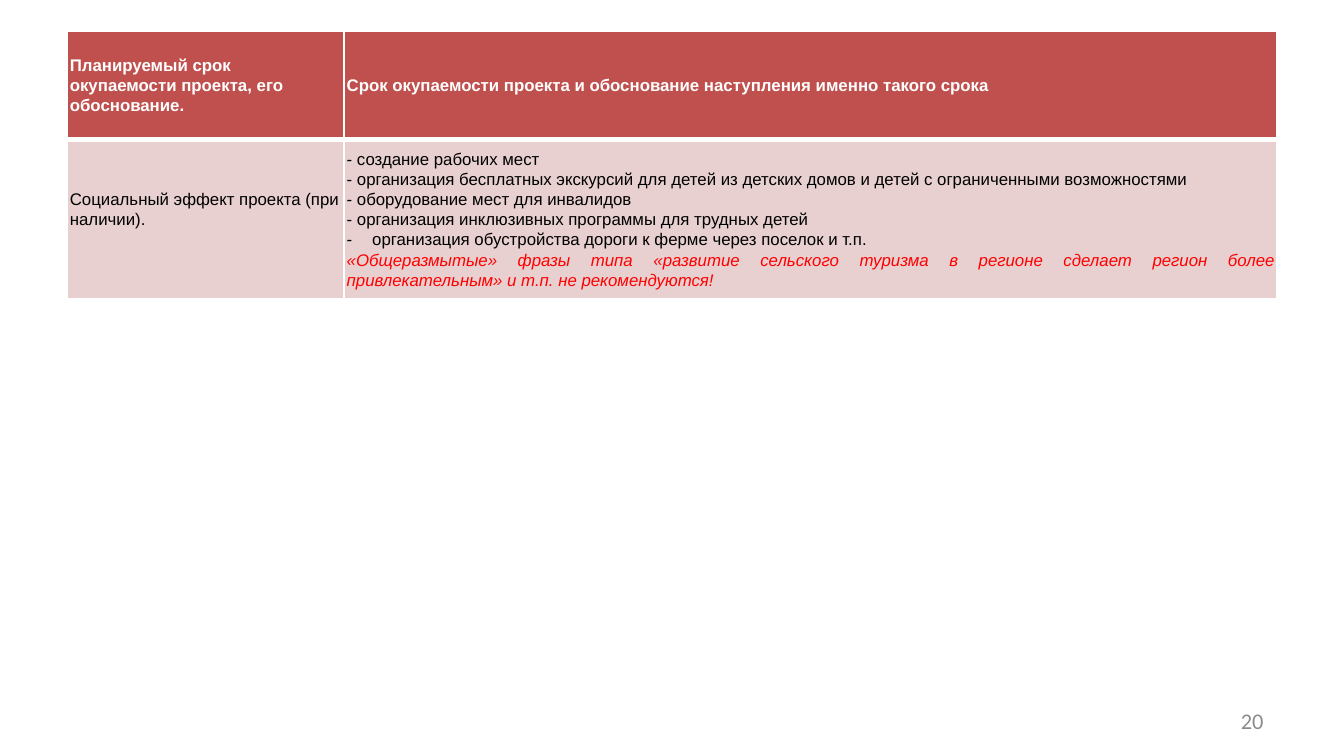
from lxml.etree import SubElement
from pptx import Presentation
from pptx.dml.color import RGBColor
from pptx.enum.text import MSO_ANCHOR as Anchor, PP_ALIGN as Align
from pptx.oxml.ns import qn
from pptx.util import Inches, Pt

COLORS = {
    "header": "C0504D",
    "body": "E8D0D0",
    "white": "FFFFFF",
    "black": "000000",
    "warning": "FF0000",
    "number": "8C8C8C",
}
HEADINGS = [
    "Планируемый срок окупаемости проекта, его обоснование.",
    "Срок окупаемости проекта и обоснование наступления именно такого срока",
]
EFFECT = "Социальный эффект проекта (при наличии)."
EXAMPLES = [
    "- создание рабочих мест",
    "- организация бесплатных экскурсий для детей из детских домов и детей с ограниченными возможностями",
    "- оборудование мест для инвалидов",
    "- организация инклюзивных программы для трудных детей",
    "организация обустройства дороги к ферме через поселок и т.п.",
]
WARNING = (
    "«Общеразмытые» фразы типа «развитие сельского туризма в регионе сделает "
    "регион более привлекательным» и т.п. не рекомендуются!"
)


def rgb(name):
    return RGBColor.from_string(COLORS[name])


def style_font(paragraph, name, size, color, bold=False, italic=False):
    for font in (paragraph.font, *(run.font for run in paragraph.runs)):
        font.name, font.size = name, Pt(size)
        font.bold, font.italic = bold, italic
        font.color.rgb = rgb(color)


def add_bullet(paragraph, char):
    properties = paragraph._p.get_or_add_pPr()
    properties.set("marL", str(Inches(0.19)))
    properties.set("indent", str(-Inches(0.19)))
    for tag, attributes in (
        ("a:buFont", {"typeface": "Arial"}),
        ("a:buChar", {"char": char}),
    ):
        bullet = properties.makeelement(qn(tag), attributes)
        properties.insert_element_before(bullet, "a:tabLst", "a:defRPr", "a:extLst")


def set_borders(cell, top, bottom):
    properties = cell._tc.get_or_add_tcPr()
    widths = {"a:lnL": 1, "a:lnR": 1, "a:lnT": top, "a:lnB": bottom}
    for index, (side, width) in enumerate(widths.items()):
        line = properties.makeelement(qn(side), {"w": str(Pt(width))})
        fill = SubElement(line, qn("a:solidFill"))
        SubElement(fill, qn("a:srgbClr"), val=COLORS["white"])
        properties.insert(index, line)


def fill_cell(cell, lines, fill, color, bold=False, top=1, bottom=1):
    cell.text = "\n".join(lines)
    cell.fill.solid()
    cell.fill.fore_color.rgb = rgb(fill)
    cell.vertical_anchor = Anchor.MIDDLE
    cell.margin_left = cell.margin_right = Inches(0.02)
    cell.margin_top = cell.margin_bottom = Inches(0.03)
    set_borders(cell, top, bottom)
    for paragraph in cell.text_frame.paragraphs:
        paragraph.line_spacing = 1.07
        style_font(paragraph, "Arial", 9, color, bold)


def add_project_table(slide):
    table = slide.shapes.add_table(
        2, 2, Inches(0.5), Inches(0.23), Inches(9), Inches(1.92)
    ).table
    table.horz_banding = False
    for column, width in zip(table.columns, (2.06, 6.94)):
        column.width = Inches(width)
    for row, height in zip(table.rows, (0.81, 1.11)):
        row.height = Inches(height)

    for column, heading in enumerate(HEADINGS):
        fill_cell(table.cell(0, column), [heading], "header", "white", bold=True, bottom=3)

    effect = table.cell(1, 0)
    fill_cell(effect, [EFFECT], "body", "black", top=3)
    effect.margin_bottom = Inches(0.18)

    examples = table.cell(1, 1)
    fill_cell(examples, EXAMPLES + [WARNING], "body", "black", top=3)
    *_, road, warning = examples.text_frame.paragraphs
    add_bullet(road, "-")
    warning.alignment = Align.JUSTIFY
    style_font(warning, "Arial", 9, "warning", italic=True)


def add_slide_number(slide, number):
    frame = slide.shapes.add_textbox(
        Inches(7.17), Inches(5.21), Inches(2.33), Inches(0.3)
    ).text_frame
    frame.word_wrap = True
    frame.vertical_anchor = Anchor.MIDDLE
    paragraph = frame.paragraphs[0]
    paragraph.text = number
    paragraph.alignment = Align.RIGHT
    style_font(paragraph, "Calibri", 12, "number")


def main():
    presentation = Presentation()
    presentation.slide_width = Inches(10)
    presentation.slide_height = Inches(10 * 9 / 16)
    slide = presentation.slides.add_slide(presentation.slide_layouts[6])
    add_slide_number(slide, "20")
    add_project_table(slide)
    presentation.save("out.pptx")


if __name__ == "__main__":
    main()
